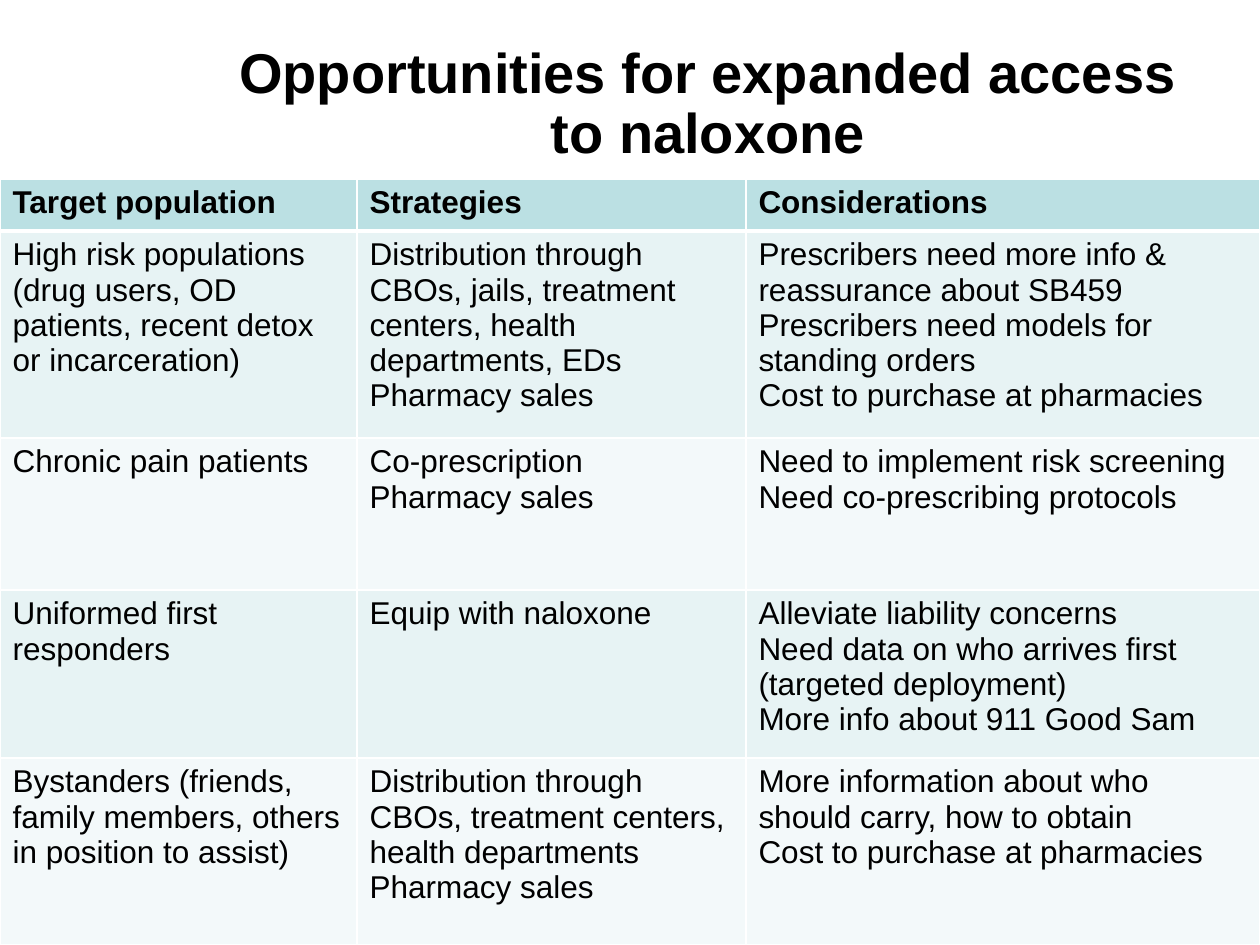
"""Build a slide with a table of ways to expand access to naloxone."""
import lxml.etree
import pptx
import pptx.dml.color
import pptx.enum.text
import pptx.oxml.ns
import pptx.util

EMU_PER_PX = 914400 / 126
COLORS = {
    "text": "000000",
    "border": "FFFFFF",
    "header": "BBE0E3",
    "odd_row": "E7F3F4",
    "even_row": "F3F9FA",
}
COLUMN_WIDTHS = [357, 389, 514]
ROW_HEIGHTS = [52, 207, 152, 168, 187]
ACCESS_ROWS = [
    [["Target population"], ["Strategies"], ["Considerations"]],
    [
        ["High risk populations (drug users, OD patients, recent detox or incarceration)"],
        ["Distribution through CBOs, jails, treatment centers, health departments, EDs",
         "Pharmacy sales"],
        ["Prescribers need more info & reassurance about SB459",
         "Prescribers need models for standing orders",
         "Cost to purchase at pharmacies"],
    ],
    [
        ["Chronic pain patients"],
        ["Co-prescription", "Pharmacy sales"],
        ["Need to implement risk screening", "Need co-prescribing protocols"],
    ],
    [
        ["Uniformed first responders"],
        ["Equip with naloxone"],
        ["Alleviate liability concerns",
         "Need data on who arrives first (targeted deployment)",
         "More info about 911 Good Sam"],
    ],
    [
        ["Bystanders (friends, family members, others in position to assist)"],
        ["Distribution through CBOs, treatment centers, health departments",
         "Pharmacy sales"],
        ["More information about who should carry, how to obtain",
         "Cost to purchase at pharmacies"],
    ],
]


def px(length):
    """Turn whole pixels into EMU."""
    return pptx.util.Emu(round(length * EMU_PER_PX))


def rgb(name):
    """Look up a named colour."""
    return pptx.dml.color.RGBColor.from_string(COLORS[name])


def write_text(frame, lines, size, bold=False, align=None, spacing=None):
    """Write one formatted paragraph for each line."""
    frame.word_wrap = True
    for index, line in enumerate(lines):
        paragraph = frame.add_paragraph() if index else frame.paragraphs[0]
        paragraph.alignment = align
        paragraph.line_spacing = spacing
        run = paragraph.add_run()
        run.text = line
        run.font.name = "Arial"
        run.font.size = pptx.util.Pt(size)
        run.font.bold = bold
        run.font.color.rgb = rgb("text")


def set_borders(cell, widths):
    """Draw the cell edges with the given widths in points."""
    properties = cell._tc.get_or_add_tcPr()
    qn = pptx.oxml.ns.qn
    for side, width in widths.items():
        edge = lxml.etree.SubElement(
            properties, qn(f"a:ln{side}"), w=str(pptx.util.Pt(width)))
        fill = lxml.etree.SubElement(edge, qn("a:solidFill"))
        lxml.etree.SubElement(fill, qn("a:srgbClr"), val=COLORS["border"])


def add_heading(slide, left, top, width, height):
    """Place the slide title in its box."""
    title = slide.shapes.title
    title.left, title.top = px(left), px(top)
    title.width, title.height = px(width), px(height)
    title.text_frame.auto_size = pptx.enum.text.MSO_AUTO_SIZE.NONE
    title.text_frame.vertical_anchor = pptx.enum.text.MSO_ANCHOR.MIDDLE
    write_text(title.text_frame, ["Opportunities for expanded access to naloxone"],
               size=32, bold=True, align=pptx.enum.text.PP_ALIGN.CENTER, spacing=0.9)


def add_access_table(slide, left, top):
    """Place the table of populations, strategies and considerations."""
    table = slide.shapes.add_table(
        len(ROW_HEIGHTS), len(COLUMN_WIDTHS), px(left), px(top),
        px(sum(COLUMN_WIDTHS)), px(sum(ROW_HEIGHTS))).table
    for column, width in zip(table.columns, COLUMN_WIDTHS):
        column.width = px(width)
    for index, (row, height, entries) in enumerate(
            zip(table.rows, ROW_HEIGHTS, ACCESS_ROWS)):
        row.height = px(height)
        is_header = index == 0
        band = "header" if is_header else "odd_row" if index % 2 else "even_row"
        widths = {"L": 1, "R": 1, "T": 3 if index == 1 else 1, "B": 3 if is_header else 1}
        for cell, lines in zip(row.cells, entries):
            set_borders(cell, widths)
            cell.fill.solid()
            cell.fill.fore_color.rgb = rgb(band)
            write_text(cell.text_frame, lines, size=18, bold=is_header)


def main():
    """Build and save the slide."""
    presentation = pptx.Presentation()
    presentation.slide_width, presentation.slide_height = px(1260), px(945)
    slide = presentation.slides.add_slide(presentation.slide_layouts[5])
    add_heading(slide, left=199, top=53, width=1018, height=105)
    add_access_table(slide, left=0, top=179)
    presentation.save("out.pptx")


if __name__ == "__main__":
    main()
